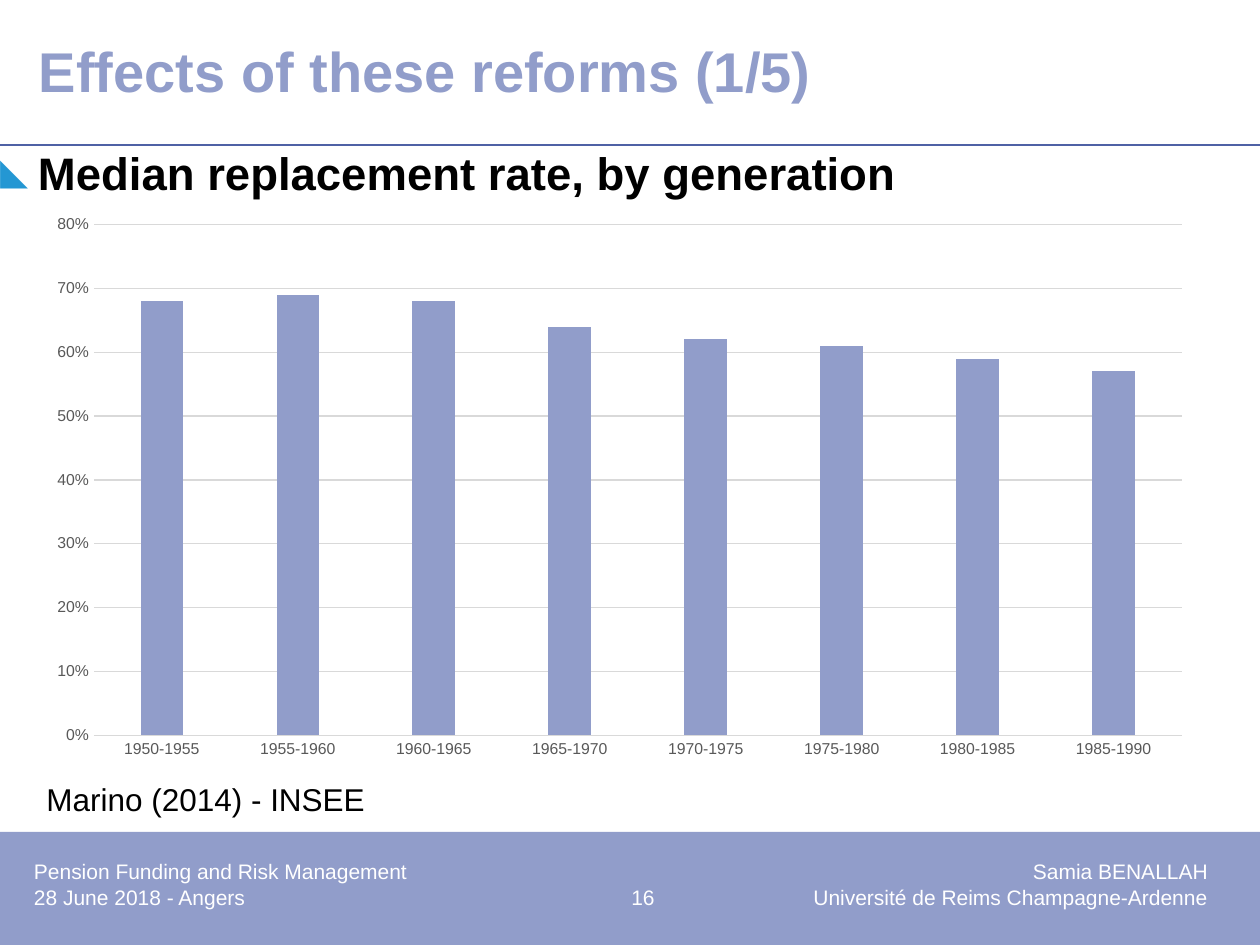
"""Build the slide on median replacement rates by generation."""
from dataclasses import dataclass

from lxml.etree import SubElement
from pptx import Presentation
from pptx.chart.data import CategoryChartData
from pptx.dml.color import RGBColor as RGB
from pptx.enum.chart import XL_CHART_TYPE as ChartType, XL_TICK_MARK as Tick
from pptx.enum.shapes import MSO_CONNECTOR as Connector, MSO_SHAPE as Shape
from pptx.enum.text import MSO_ANCHOR as Anchor, MSO_AUTO_SIZE as AutoSize, PP_ALIGN as Align
from pptx.oxml.ns import qn
from pptx.util import Pt

EMU_PER_PX = 914400 / 126


@dataclass(frozen=True)
class Theme:
    font: str = "Arial"
    accent: RGB = RGB(0x91, 0x9D, 0xCA)
    rule: RGB = RGB(0x4F, 0x61, 0xA5)
    bullet: str = "2497D3"
    ink: RGB = RGB(0, 0, 0)
    paper: RGB = RGB(255, 255, 255)
    axis: RGB = RGB(0x59, 0x59, 0x59)
    grid: RGB = RGB(0xD9, 0xD9, 0xD9)
    title_pt: int = 32
    body_pt: int = 26
    source_pt: int = 18
    footer_pt: int = 12
    axis_pt: int = 9
    line_pt: float = 0.75


@dataclass(frozen=True)
class Box:
    x: int
    y: int
    w: int
    h: int

    def emu(self) -> tuple[int, ...]:
        return tuple(px(v) for v in (self.x, self.y, self.w, self.h))


@dataclass(frozen=True)
class TextStyle:
    size: int
    color: RGB
    bold: bool = False
    inset: int | None = 0
    anchor: Anchor = Anchor.TOP
    spacing: float = 1.0


THEME = Theme()
TITLE = TextStyle(THEME.title_pt, THEME.accent, True, anchor=Anchor.MIDDLE, spacing=0.85)
BODY = TextStyle(THEME.body_pt, THEME.ink, True)
FOOTER = TextStyle(THEME.footer_pt, THEME.paper)
SOURCE = TextStyle(THEME.source_pt, THEME.ink, inset=None)

RATES = {
    "1950-1955": 0.68, "1955-1960": 0.69, "1960-1965": 0.68, "1965-1970": 0.64,
    "1970-1975": 0.62, "1975-1980": 0.61, "1980-1985": 0.59, "1985-1990": 0.57,
}


def px(n: int) -> int:
    """Turn pixels into EMU."""
    return round(n * EMU_PER_PX)


def set_attrs(obj, values: dict) -> None:
    """Set each named attribute on an object."""
    for name, value in values.items():
        setattr(obj, name, value)


def set_font(font, size: int, color: RGB, bold: bool = False) -> None:
    """Apply the theme font with a size, colour and weight."""
    set_attrs(font, {"name": THEME.font, "size": Pt(size), "bold": bold})
    font.color.rgb = color


def set_line(line, color: RGB) -> None:
    """Apply the thin line of the theme."""
    line.color.rgb = color
    line.width = Pt(THEME.line_pt)


def write(s, box: Box, lines: list[str], style: TextStyle) -> list:
    """Place a text shape, fill it and return its paragraphs."""
    set_attrs(s, dict(zip(("left", "top", "width", "height"), box.emu())))
    tf = s.text_frame
    set_attrs(tf, {"word_wrap": True, "auto_size": AutoSize.NONE, "vertical_anchor": style.anchor})
    if style.inset is not None:
        sides = ("left", "top", "right", "bottom")
        set_attrs(tf, {f"margin_{side}": px(style.inset) for side in sides})
    tf.text = "\n".join(lines)
    for p in tf.paragraphs:
        set_attrs(p, {"alignment": Align.LEFT, "line_spacing": style.spacing})
        for r in p.runs:
            set_font(r.font, style.size, style.color, style.bold)
    return list(tf.paragraphs)


def add_bullet(p, indent: int) -> None:
    """Give a paragraph the triangle bullet and a hanging indent."""
    pPr = p._p.get_or_add_pPr()
    pPr.set("marL", str(px(indent)))
    pPr.set("indent", str(-px(indent)))
    SubElement(SubElement(pPr, qn("a:buClr")), qn("a:srgbClr"), val=THEME.bullet)
    SubElement(pPr, qn("a:buSzPct"), val="80000")
    SubElement(pPr, qn("a:buFont"), typeface=THEME.font)
    SubElement(pPr, qn("a:buChar"), char="◣")


def add_tabs(p, stops: dict[str, int]) -> None:
    """Add tab stops, given as alignment and position."""
    tabs = SubElement(p._p.get_or_add_pPr(), qn("a:tabLst"))
    for algn, pos in stops.items():
        SubElement(tabs, qn("a:tab"), pos=str(px(pos)), algn=algn)


def add_band(shapes, box: Box) -> None:
    """Draw the footer band."""
    s = shapes.add_shape(Shape.RECTANGLE, *box.emu())
    s.shadow.inherit = False
    s.fill.solid()
    s.fill.fore_color.rgb = THEME.accent
    s.line.fill.background()


def add_rule(shapes, y: int, width: int) -> None:
    """Draw the line under the title."""
    c = shapes.add_connector(Connector.STRAIGHT, 0, px(y), px(width), px(y))
    set_line(c.line, THEME.rule)
    SubElement(c._element.spPr, qn("a:effectLst"))


def add_rate_chart(shapes, box: Box) -> None:
    """Draw the column chart of replacement rates."""
    data = CategoryChartData(number_format="0%")
    data.categories = list(RATES)
    data.add_series("Series 1", list(RATES.values()))
    chart = shapes.add_chart(ChartType.COLUMN_CLUSTERED, *box.emu(), data).chart
    set_attrs(chart, {"has_legend": False, "has_title": False})
    plot = chart.plots[0]
    set_attrs(plot, {"gap_width": 219, "overlap": -27, "vary_by_categories": False})
    fill = plot.series[0].format.fill
    fill.solid()
    fill.fore_color.rgb = THEME.accent

    cat, val = chart.category_axis, chart.value_axis
    for axis in (cat, val):
        set_attrs(axis, {"major_tick_mark": Tick.NONE, "minor_tick_mark": Tick.NONE})
        set_font(axis.tick_labels.font, THEME.axis_pt, THEME.axis)
    set_line(cat.format.line, THEME.grid)
    set_attrs(val, {"minimum_scale": 0, "maximum_scale": 0.8, "major_unit": 0.1})
    set_attrs(val.tick_labels, {"number_format": "0%", "number_format_is_linked": False})
    set_line(val.major_gridlines.format.line, THEME.grid)
    val.format.line.fill.background()


def main() -> None:
    """Build and save the presentation."""
    prs = Presentation()
    set_attrs(prs, {"slide_width": px(1260), "slide_height": px(945)})
    slide = prs.slides.add_slide(prs.slide_layouts[1])
    shapes = slide.shapes

    add_band(shapes, Box(0, 832, 1260, 113))
    add_rule(shapes, 145, 1260)
    write(shapes.title, Box(39, 25, 1201, 100), ["Effects of these reforms (1/5)"], TITLE)
    body = write(slide.placeholders[1], Box(0, 145, 1260, 694),
                 ["Median replacement rate, by generation"], BODY)
    add_bullet(body[0], 38)
    add_rate_chart(shapes, Box(34, 204, 1171, 566))

    source = Box(34, 774, 1191, 50)
    write(shapes.add_textbox(*source.emu()), source, ["Marino (2014) - INSEE"], SOURCE)
    footer = Box(34, 859, 1191, 66)
    lines = ["Pension Funding and Risk Management\t\tSamia BENALLAH",
             "28 June 2018 - Angers\t16\tUniversité de Reims Champagne-Ardenne"]
    for p in write(shapes.add_textbox(*footer.emu()), footer, lines, FOOTER):
        add_tabs(p, {"ctr": 609, "r": 1174})
    prs.save("out.pptx")


if __name__ == "__main__":
    main()
